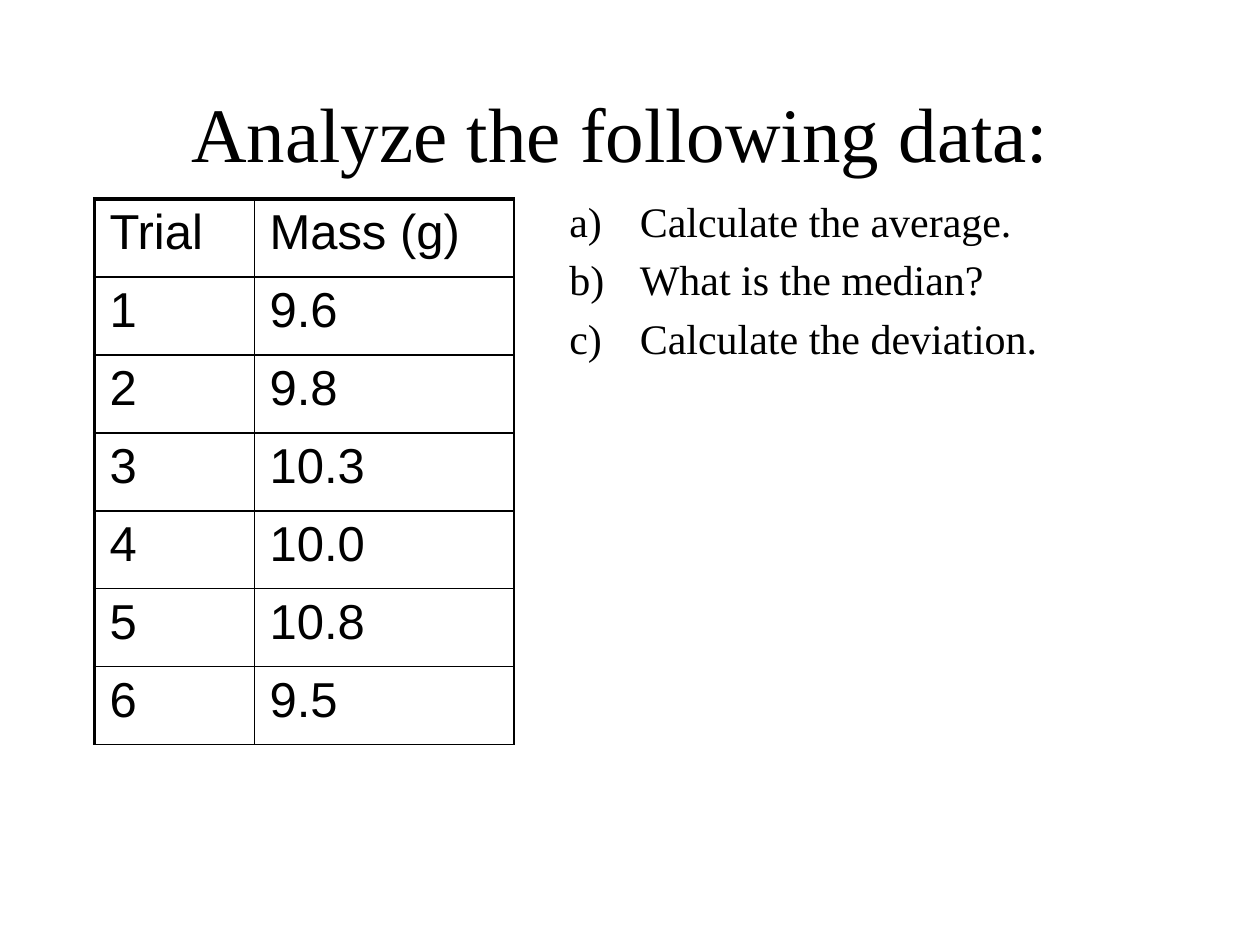
from lxml import etree
from pptx import Presentation
from pptx import util as u
from pptx.dml.color import RGBColor
from pptx.enum import text
from pptx.oxml.ns import qn

BLACK = RGBColor(0x00, 0x00, 0x00)
SERIF, SANS = "Times New Roman", "Arial"
ROWS = [("Trial", "Mass (g)"), ("1", "9.6"), ("2", "9.8"), ("3", "10.3"),
        ("4", "10.0"), ("5", "10.8"), ("6", "9.5")]
QUESTIONS = ["Calculate the average.", "What is the median?", "Calculate the deviation."]


def set_all(obj, **values):
    """Set each named attribute on an object."""
    for name, value in values.items():
        setattr(obj, name, value)


def add_run(p, words, font, size):
    """Add a black run to a paragraph."""
    r = p.add_run()
    r.text = words
    set_all(r.font, name=font, size=u.Pt(size))
    r.font.color.rgb = BLACK


def space_before(p, percent=20):
    """Give a paragraph proportional space before it."""
    spacing = etree.SubElement(p._p.get_or_add_pPr(), qn("a:spcBef"))
    etree.SubElement(spacing, qn("a:spcPct"), val=str(percent * 1000))


def set_borders(cell, widths):
    """Draw solid black cell borders from a dict of side and points."""
    tc_pr = cell._tc.get_or_add_tcPr()
    for i, (side, width) in enumerate(widths.items()):
        ln = etree.Element(qn(f"a:ln{side}"), w=str(u.Pt(width)))
        fill = etree.SubElement(ln, qn("a:solidFill"))
        etree.SubElement(fill, qn("a:srgbClr"), val=str(BLACK))
        tc_pr.insert(i, ln)


def place_title(s, left, top, width, height):
    """Place and format the slide title."""
    sp = s.shapes.title
    set_all(sp, left=left, top=top, width=width, height=height)
    tf = sp.text_frame
    set_all(tf, vertical_anchor=text.MSO_ANCHOR.MIDDLE, word_wrap=True)
    p = tf.paragraphs[0]
    p.alignment = text.PP_ALIGN.CENTER
    add_run(p, "Analyze the following data: ", SERIF, 44)


def add_trials(s, left, top, width, height):
    """Add the table of measured masses."""
    table = s.shapes.add_table(len(ROWS), 2, left, top, width, height).table
    set_all(table, first_row=False, horz_banding=False)
    table.columns[0].width = u.Inches(1.27)
    table.columns[1].width = width - u.Inches(1.27)
    for i, row in enumerate(ROWS):
        table.rows[i].height = height // len(ROWS)
        for j, words in enumerate(row):
            cell = table.cell(i, j)
            set_all(cell, margin_left=u.Inches(0.12), margin_right=u.Inches(0.12),
                    margin_top=u.Inches(0.05), margin_bottom=u.Inches(0.05))
            cell.fill.background()
            set_borders(cell, {"L": 1 if j else 2.25, "R": 1, "T": 1 if i else 2.25, "B": 1})
            p = cell.text_frame.paragraphs[0]
            space_before(p)
            add_run(p, words, SANS, 28)


def add_questions(s, left, top, width, height):
    """Add the lettered list of questions."""
    tf = s.shapes.add_textbox(left, top, width, height).text_frame
    tf.word_wrap = True
    for i, words in enumerate(QUESTIONS):
        p = tf.add_paragraph() if i else tf.paragraphs[0]
        p_pr = p._p.get_or_add_pPr()
        p_pr.set("marL", str(u.Inches(0.56)))
        p_pr.set("indent", str(-u.Inches(0.56)))
        space_before(p)
        etree.SubElement(p_pr, qn("a:buFont"), typeface=SERIF)
        etree.SubElement(p_pr, qn("a:buAutoNum"), type="alphaLcParenR")
        add_run(p, words, SERIF, 24)


def main():
    """Build and save the slide."""
    prs = Presentation()
    set_all(prs, slide_width=u.Inches(10), slide_height=u.Inches(7.5))
    s = prs.slides.add_slide(prs.slide_layouts[5])
    place_title(s, u.Inches(0.75), u.Inches(0.67), u.Inches(8.5), u.Inches(0.75))
    add_trials(s, u.Inches(0.75), u.Inches(1.58), u.Inches(3.33), u.Inches(4.33))
    add_questions(s, u.Inches(4.42), u.Inches(1.5), u.Inches(4.83), u.Inches(4.5))
    prs.save("out.pptx")


if __name__ == "__main__":
    main()
